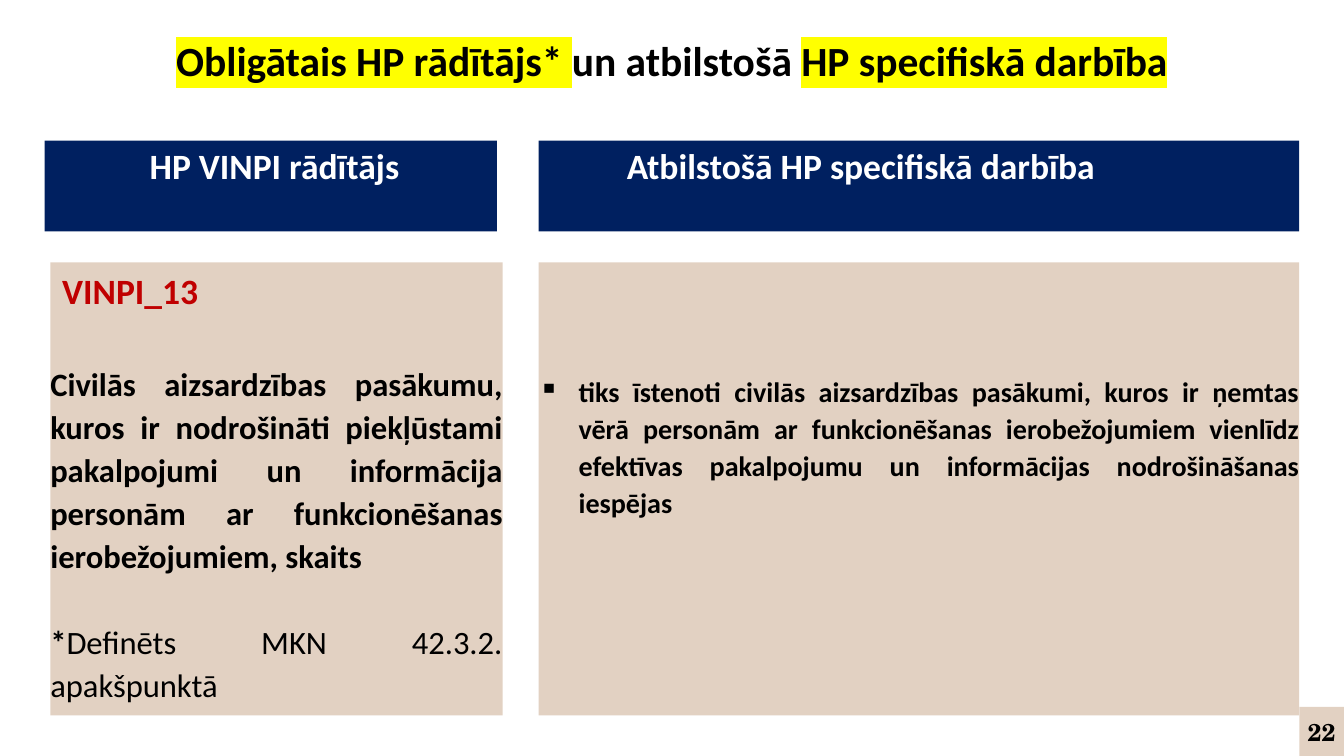
"""Build the slide that pairs a mandatory indicator with its specific action."""
from lxml.etree import SubElement
from pptx import Presentation
from pptx.dml.color import RGBColor
from pptx.enum.shapes import MSO_SHAPE
from pptx.enum.text import MSO_ANCHOR, PP_ALIGN
from pptx.oxml.ns import qn
from pptx.util import Pt

NAVY = RGBColor(0x00, 0x20, 0x60)
SAND = RGBColor(0xE2, 0xD1, 0xC2)
RED = RGBColor(0xC0, 0x00, 0x00)
BLACK = RGBColor(0x00, 0x00, 0x00)
WHITE = RGBColor(0xFF, 0xFF, 0xFF)
YELLOW = RGBColor(0xFF, 0xFF, 0x00)


def add_panel(left, top, width, height, fill=None, inset_left=0, inset_top=0, anchor=MSO_ANCHOR.TOP):
    box = page.shapes.add_shape(MSO_SHAPE.RECTANGLE, Pt(left), Pt(top), Pt(width), Pt(height))
    box.shadow.inherit = False
    box.line.fill.background()
    if fill is None:
        box.fill.background()
    else:
        box.fill.solid()
        box.fill.fore_color.rgb = fill
    frame = box.text_frame
    frame.word_wrap = True
    frame.vertical_anchor = anchor
    frame.margin_left, frame.margin_top = Pt(inset_left), Pt(inset_top)
    frame.margin_right = frame.margin_bottom = 0
    return frame


def write(text, para, size=22, color=BLACK, bold=True, font="Calibri", align=None, spacing=None, before=None, highlight=None):
    if align is not None:
        para.alignment = align
    if spacing is not None:
        para.line_spacing = spacing
    if before is not None:
        para.space_before = Pt(before)
    span = para.add_run()
    span.text = text
    span.font.size = Pt(size)
    span.font.bold = bold
    span.font.color.rgb = color
    if highlight is not None:
        mark = SubElement(span.font._element, qn("a:highlight"))
        SubElement(mark, qn("a:srgbClr"), val=str(highlight))
    span.font.name = font


deck = Presentation()
deck.slide_width, deck.slide_height = Pt(907.2), Pt(510.5)
page = deck.slides.add_slide(deck.slide_layouts[6])

title = add_panel(34, 27.4, 839, 50).paragraphs[0]
for text, highlight in [
    ("Obligātais HP rādītājs* ", YELLOW),
    ("un atbilstošā ", None),
    ("HP specifiskā darbība", YELLOW),
]:
    write(text, title, size=28, align=PP_ALIGN.CENTER, spacing=0.9, highlight=highlight)

for text, left, width, inset, align in [
    ("HP VINPI rādītājs", 30.2, 305.3, 5, PP_ALIGN.CENTER),
    ("Atbilstošā HP specifiskā darbība", 363.6, 513.4, 59.5, PP_ALIGN.LEFT),
]:
    header = add_panel(left, 95, width, 61.2, fill=NAVY, inset_left=inset, inset_top=2.5)
    write(text, header.paragraphs[0], size=24, color=WHITE, align=align)

indicator = add_panel(34, 177.1, 305.3, 306, fill=SAND)
code = indicator.paragraphs[0]
code._p.get_or_add_pPr().set("marL", str(Pt(8)))
write("VINPI_13", code, size=24, color=RED, align=PP_ALIGN.LEFT, spacing=1.15)
write(
    "Civilās aizsardzības pasākumu, kuros ir nodrošināti piekļūstami pakalpojumi un informācija "
    "personām ar funkcionēšanas ierobežojumiem, skaits",
    indicator.add_paragraph(), align=PP_ALIGN.JUSTIFY, spacing=1.1, before=33,
)
footnote = indicator.add_paragraph()
write("*", footnote, align=PP_ALIGN.JUSTIFY, spacing=1.1, before=29)
write("Definēts MKN 42.3.2. apakšpunktā", footnote, bold=False)

action = add_panel(363.6, 177.1, 513.4, 306, fill=SAND, inset_top=73.5).paragraphs[0]
properties = action._p.get_or_add_pPr()
properties.set("marL", str(Pt(27)))
properties.set("indent", str(Pt(-27)))
SubElement(properties, qn("a:buChar"), char="▪")
write(
    "tiks īstenoti civilās aizsardzības pasākumi, kuros ir ņemtas vērā personām ar funkcionēšanas "
    "ierobežojumiem vienlīdz efektīvas pakalpojumu un informācijas nodrošināšanas iespējas",
    action, size=19, align=PP_ALIGN.JUSTIFY, spacing=1.1,
)

number = add_panel(877, 477.4, 30.2, 33.1, fill=SAND, anchor=MSO_ANCHOR.MIDDLE)
write("22", number.paragraphs[0], size=16.4, font="TeX Gyre Schola", align=PP_ALIGN.CENTER)

deck.save("out.pptx")
